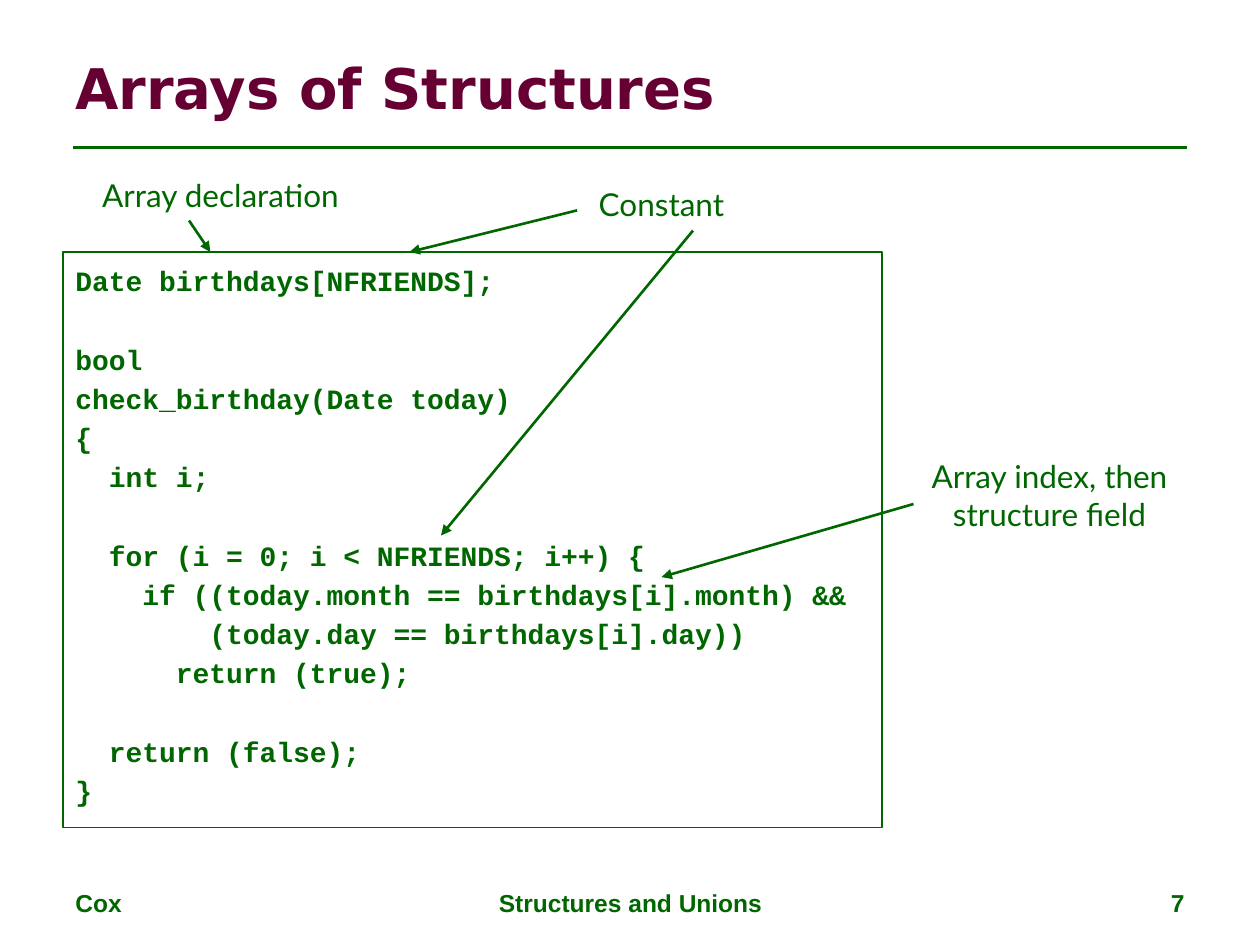
from lxml.etree import SubElement
from pptx import Presentation
from pptx.dml.color import RGBColor
from pptx.enum.shapes import MSO_CONNECTOR, MSO_SHAPE
from pptx.enum.text import MSO_ANCHOR, PP_ALIGN
from pptx.oxml.ns import qn
from pptx.util import Inches, Pt

GREEN = "006600"
MAROON = "660033"

CODE = """\
Date birthdays[NFRIENDS];

bool
check_birthday(Date today)
{
  int i;

  for (i = 0; i < NFRIENDS; i++) {
    if ((today.month == birthdays[i].month) &&
        (today.day == birthdays[i].day))
      return (true);

  return (false);
}"""


def color(hex_string):
    return RGBColor.from_string(hex_string)


def style(paragraph, font_name, size, hex_string, bold):
    font = paragraph.font
    font.name = font_name
    font.size = Pt(size)
    font.bold = bold
    font.color.rgb = color(hex_string)


def add_text(slide, text, box, font_name, size, align=PP_ALIGN.LEFT,
             hex_string=GREEN, bold=False, anchor=MSO_ANCHOR.TOP):
    frame = slide.shapes.add_textbox(*map(Inches, box)).text_frame
    frame.word_wrap = True
    frame.vertical_anchor = anchor
    paragraph = frame.paragraphs[0]
    paragraph.text = text
    paragraph.alignment = align
    style(paragraph, font_name, size, hex_string, bold)


def add_code(slide, code, box):
    """Outlined box with one paragraph for each line of code."""
    listing = slide.shapes.add_shape(MSO_SHAPE.RECTANGLE, *map(Inches, box))
    listing.shadow.inherit = False
    listing.fill.background()
    listing.line.color.rgb = color(GREEN)
    listing.line.width = Pt(0.75)
    frame = listing.text_frame
    frame.word_wrap = True
    frame.vertical_anchor = MSO_ANCHOR.TOP
    for number, code_line in enumerate(code.split("\n")):
        paragraph = frame.add_paragraph() if number else frame.paragraphs[0]
        paragraph.text = code_line
        paragraph.alignment = PP_ALIGN.LEFT
        paragraph.line_spacing = Pt(22.4)
        style(paragraph, "Courier New", 16, GREEN, True)


def add_line(slide, start, end, arrow=True):
    connector = slide.shapes.add_connector(
        MSO_CONNECTOR.STRAIGHT, *map(Inches, start + end))
    connector.line.color.rgb = color(GREEN)
    connector.line.width = Pt(1.5)
    if arrow:
        outline = connector.line._get_or_add_ln()
        SubElement(outline, qn("a:tailEnd"), type="triangle")
    SubElement(connector._element.spPr, qn("a:effectLst"))


def main():
    presentation = Presentation()
    presentation.slide_width = Inches(10)
    presentation.slide_height = Inches(7.5)
    slide = presentation.slides.add_slide(presentation.slide_layouts[6])

    add_line(slide, (0.58, 1.17), (9.42, 1.17), arrow=False)
    for text, left, width, align in (
        ("Cox", 0.5, 2.33, PP_ALIGN.LEFT),
        ("Structures and Unions", 3.42, 3.17, PP_ALIGN.CENTER),
        ("7", 7.17, 2.33, PP_ALIGN.RIGHT),
    ):
        add_text(slide, text, (left, 7, width, 0.35), "Arial", 14, align,
                 bold=True)
    add_text(slide, "Arrays of Structures", (0.5, 0.3, 9, 0.78),
             "DejaVu Sans", 32, hex_string=MAROON, bold=True,
             anchor=MSO_ANCHOR.MIDDLE)

    add_code(slide, CODE, (0.5, 2, 6.5, 4.57))

    for label, box in (
        ("Constant", (4.5, 1.42, 1.5, 0.4)),
        ("Array declaration", (0.5, 1.35, 2.5, 0.4)),
        ("Array index, then structure field", (7.08, 3.58, 2.5, 0.7)),
    ):
        add_text(slide, label, box, "Lato", 18, PP_ALIGN.CENTER)

    for start, end in (
        ((4.58, 1.67), (3.25, 2)),
        ((1.5, 1.75), (1.67, 2)),
        ((7.25, 4), (5.25, 4.58)),
        ((5.5, 1.83), (3.5, 4.25)),
    ):
        add_line(slide, start, end)

    presentation.save("out.pptx")


if __name__ == "__main__":
    main()
